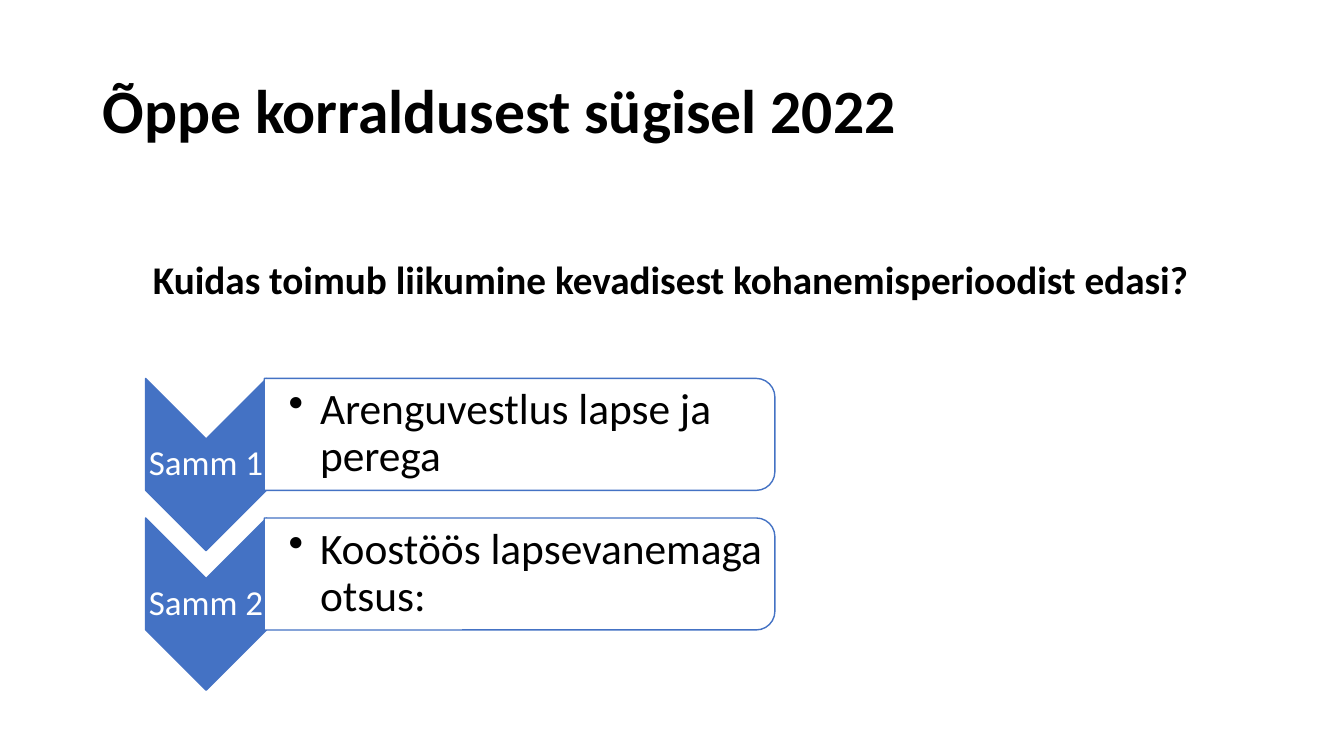
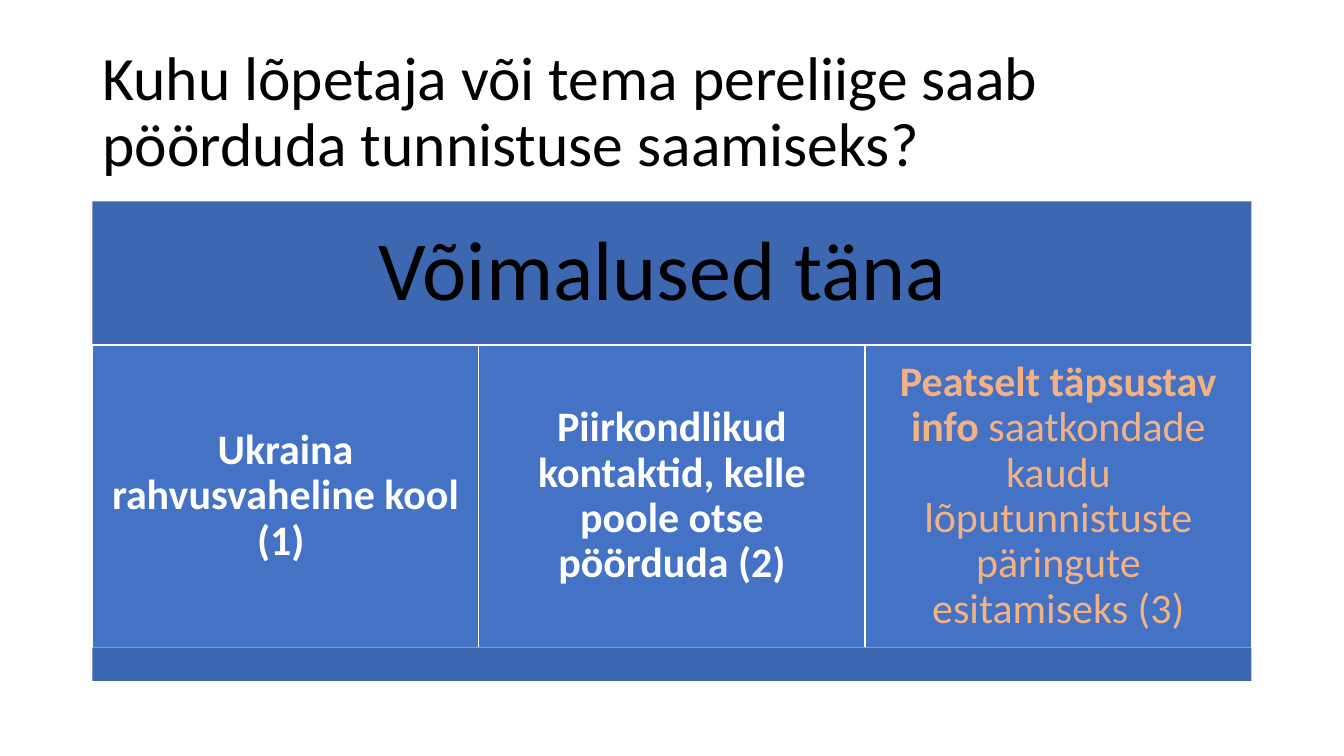
from dataclasses import dataclass

import pptx
import pptx.dml.color
import pptx.enum.shapes
import pptx.enum.text
import pptx.oxml.ns
import pptx.util
from lxml import etree

Pt = pptx.util.Pt
Shape = pptx.enum.shapes.MSO_SHAPE
Align = pptx.enum.text.PP_ALIGN


@dataclass(frozen=True)
class Theme:
    font: str = "Calibri"
    black: str = "000000"
    white: str = "FFFFFF"
    blue: str = "4472C4"
    dark_blue: str = "3E67B2"
    peach: str = "F4B183"
    title_size: float = 44
    question_size: float = 28
    step_size: float = 25
    detail_size: float = 31
    header_size: float = 60
    option_size: float = 30
    line_spacing: float = 0.9


THEME = Theme()
SLIDE_SIZE = (960, 540)
TITLE_BOX = (66, 28.8, 828, 104.4)


def color(value):
    return pptx.dml.color.RGBColor.from_string(value)


def write_text(shape, text, size, ink=THEME.black, bold=False,
               align=Align.LEFT, insets=(0, 0, 0, 0), bullet_indent=None):
    """Write one paragraph; text is a string or a list of (string, bold)."""
    frame = shape.text_frame
    frame.word_wrap = True
    frame.auto_size = pptx.enum.text.MSO_AUTO_SIZE.NONE
    frame.vertical_anchor = pptx.enum.text.MSO_ANCHOR.MIDDLE
    (frame.margin_left, frame.margin_top,
     frame.margin_right, frame.margin_bottom) = map(Pt, insets)
    paragraph = frame.paragraphs[0]
    paragraph.alignment = align
    paragraph.line_spacing = THEME.line_spacing
    if bullet_indent:
        properties = paragraph._p.get_or_add_pPr()
        properties.set("marL", str(Pt(bullet_indent)))
        properties.set("indent", str(-Pt(bullet_indent)))
        bullet = etree.SubElement(properties, pptx.oxml.ns.qn("a:buChar"))
        bullet.set("char", "•")
    for words, is_bold in [(text, bold)] if isinstance(text, str) else text:
        run = paragraph.add_run()
        run.text = words
        run.font.name = THEME.font
        run.font.size = Pt(size)
        run.font.bold = is_bold
        run.font.color.rgb = color(ink)


def add_text(slide, box, text, **text_format):
    write_text(slide.shapes.add_textbox(*map(Pt, box)), text, **text_format)


def add_block(slide, kind, box, fill, line=None):
    shape = slide.shapes.add_shape(kind, *map(Pt, box))
    shape.shadow.inherit = False
    shape.fill.solid()
    shape.fill.fore_color.rgb = color(fill)
    if line:
        shape.line.color.rgb = color(line)
        shape.line.width = Pt(1)
    else:
        shape.line.fill.background()
    return shape


def add_turned_block(slide, kind, box, fill, line):
    """Fill the given box with a shape turned a quarter clockwise."""
    left, top, width, height = box
    shift = (width - height) / 2
    shape = add_block(slide, kind, (left + shift, top - shift, height, width), fill, line)
    shape.rotation = 90
    return shape


def add_titled_slide(presentation, title, bold=False):
    slide = presentation.slides.add_slide(presentation.slide_layouts.get_by_name("Title Only"))
    placeholder = slide.shapes.title
    placeholder.left, placeholder.top, placeholder.width, placeholder.height = map(Pt, TITLE_BOX)
    write_text(placeholder, title, size=THEME.title_size, bold=bold,
               insets=(7.2, 3.6, 7.2, 3.6))
    return slide


def add_step(slide, box, label, detail):
    """Downward chevron with its label, and a rounded panel beside it."""
    left, top, width, height = box
    chevron_width, panel_height, edge = 86.4, 80, 1.6
    panel_left = left + chevron_width - edge
    panel_width = width - chevron_width + edge

    chevron_box = (left, top, chevron_width, height)
    add_turned_block(slide, Shape.CHEVRON, chevron_box, THEME.blue, THEME.blue)
    add_text(slide, chevron_box, label, size=THEME.step_size, ink=THEME.white,
             align=Align.CENTER, insets=(edge,) * 4)

    panel_box = (panel_left, top, panel_width, panel_height)
    add_turned_block(slide, Shape.ROUND_2_SAME_RECTANGLE, panel_box, THEME.white, THEME.blue)
    add_text(slide, (panel_left, top, panel_width - 4, panel_height), detail,
             size=THEME.detail_size, insets=(17.3, edge, edge, edge), bullet_indent=22.5)


def add_options_panel(slide, box, header, options):
    """Header band, a row of equal option cells and a closing band."""
    left, top, width, height = box
    header_height, footer_height = 102.6, 24
    cell_width = width / len(options)
    cell_height = height - header_height - footer_height

    band = add_block(slide, Shape.RECTANGLE, (left, top, width, header_height), THEME.dark_blue)
    write_text(band, header, size=THEME.header_size, align=Align.CENTER, insets=(18,) * 4)

    for index, (text, ink) in enumerate(options):
        cell = add_block(
            slide, Shape.RECTANGLE,
            (left + index * cell_width, top + header_height, cell_width, cell_height),
            THEME.blue, THEME.white)
        write_text(cell, text, size=THEME.option_size, ink=ink, bold=True,
                   align=Align.CENTER, insets=(8.6,) * 4)

    add_block(slide, Shape.RECTANGLE,
              (left, top + height - footer_height, width, footer_height), THEME.dark_blue)


def build_steps_slide(presentation):
    slide = add_titled_slide(presentation, "Õppe korraldusest sügisel 2022", bold=True)
    add_text(slide, (109.2, 184, 777.6, 34),
             "Kuidas toimub liikumine kevadisest kohanemisperioodist edasi?",
             size=THEME.question_size, bold=True)
    steps = [
        ("Samm 1", "Arenguvestlus lapse ja perega"),
        ("Samm 2", "Koostöös lapsevanemaga otsus:"),
    ]
    for index, (label, detail) in enumerate(steps):
        add_step(slide, (104, 270.3 + index * 99.7, 449.5, 123), label, detail)


def build_options_slide(presentation):
    slide = add_titled_slide(
        presentation, "Kuhu lõpetaja või tema pereliige saab pöörduda tunnistuse saamiseks?")
    options = [
        ("Ukraina rahvusvaheline kool (1) ", THEME.white),
        ("Piirkondlikud kontaktid, kelle poole otse pöörduda (2)", THEME.white),
        ([("Peatselt täpsustav info ", True),
          ("saatkondade kaudu lõputunnistuste päringute esitamiseks (3)", False)], THEME.peach),
    ]
    add_options_panel(slide, (66, 143.8, 828, 342.6), "Võimalused täna ", options)


def main():
    presentation = pptx.Presentation()
    presentation.slide_width, presentation.slide_height = map(Pt, SLIDE_SIZE)
    build_steps_slide(presentation)
    build_options_slide(presentation)
    presentation.save("out.pptx")


if __name__ == "__main__":
    main()
